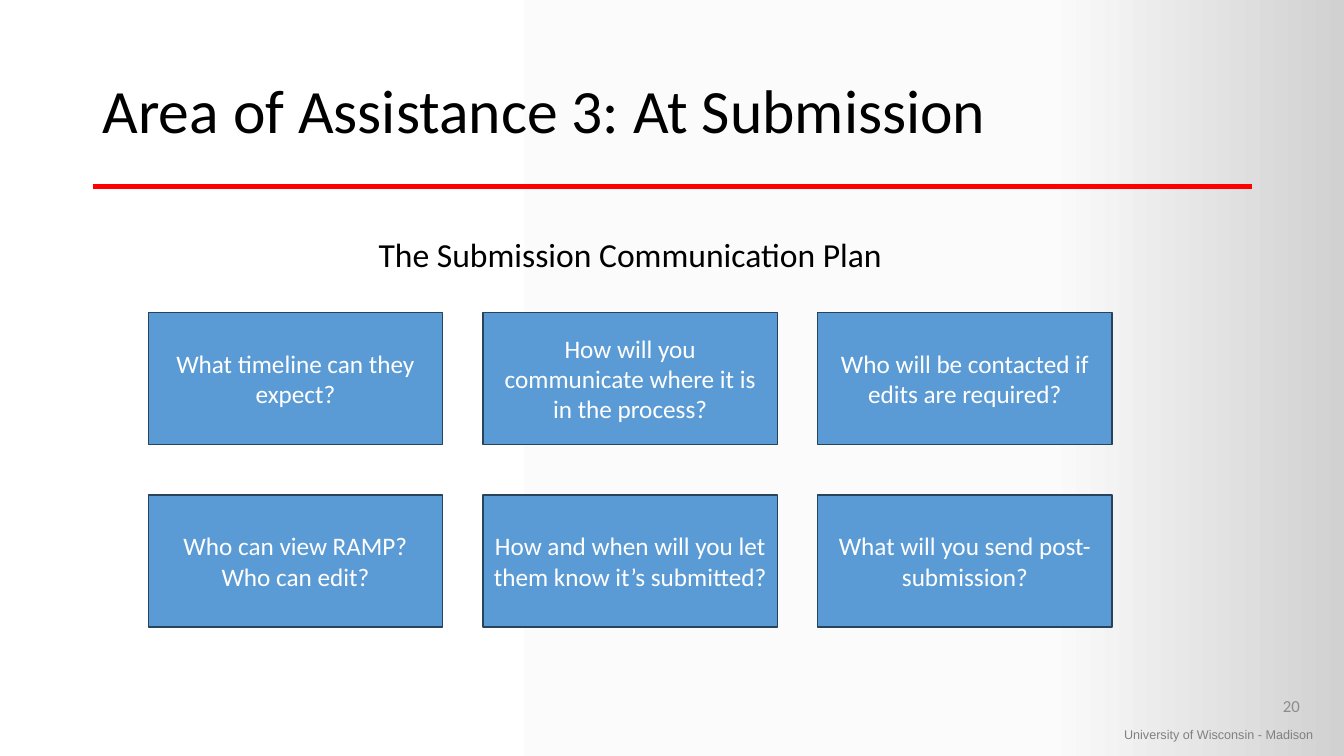
"""Build the slide on the submission communication plan."""
from copy import deepcopy
from dataclasses import dataclass

from pptx import Presentation
from pptx.dml.color import RGBColor
from pptx.enum.shapes import MSO_CONNECTOR, MSO_SHAPE
from pptx.enum.text import MSO_ANCHOR, PP_ALIGN
from pptx.oxml.ns import qn
from pptx.oxml.xmlchemy import OxmlElement
from pptx.slide import Slide
from pptx.text.text import TextFrame
from pptx.util import Inches, Pt

LEFT, CENTER, RIGHT = PP_ALIGN.LEFT, PP_ALIGN.CENTER, PP_ALIGN.RIGHT
TOP, MIDDLE = MSO_ANCHOR.TOP, MSO_ANCHOR.MIDDLE
RECTANGLE = MSO_SHAPE.RECTANGLE
STRAIGHT = MSO_CONNECTOR.STRAIGHT

COLUMNS = 3
GRID_LEFT, GRID_TOP = 1.47, 3.1
COLUMN_STEP, ROW_STEP = 3.32, 1.81
CARD_WIDTH, CARD_HEIGHT = 2.92, 1.31


@dataclass(frozen=True)
class Style:
    size: float
    color: str
    align: PP_ALIGN = LEFT
    anchor: MSO_ANCHOR = TOP
    font: str = "Calibri"
    spacing: float = 1.0


@dataclass(frozen=True)
class Label:
    text: str
    left: float
    top: float
    width: float
    height: float
    style: Style


QUESTION_STYLE = Style(18, "FFFFFF", CENTER, MIDDLE)
LABELS = [
    Label("University of Wisconsin - Madison", 11.05, 7.16, 2.28, 0.25,
          Style(9, "808080", font="Arial")),
    Label("Area of Assistance 3: At Submission", 0.92, 0.4, 11.5, 1.45,
          Style(44, "000000", anchor=MIDDLE, spacing=0.9)),
    Label("20", 9.99, 6.8, 3, 0.4, Style(12, "8C8C8C", RIGHT, MIDDLE)),
    Label("The Submission Communication Plan", 2.04, 2.27, 8.42, 0.5,
          Style(24, "000000", CENTER)),
]
QUESTIONS = [
    "What timeline can they expect?",
    "How will you communicate where it is in the process?",
    "Who will be contacted if edits are required?",
    "Who can view RAMP? Who can edit?",
    "How and when will you let them know it’s submitted?",
    "What will you send post-submission?",
]
BACKGROUND = [(0, "FFFFFF"), (0.78, "FBFBFB"), (1, "D1D1D1")]


def rgb(color: str) -> RGBColor:
    """Turn a hex string into a colour."""
    return RGBColor.from_string(color)


def paint_background(slide: Slide) -> None:
    """Fill the background with the grey gradient."""
    fill = slide.background.fill
    fill.gradient()
    fill.gradient_angle = 0
    stops = slide.element.find(".//" + qn("a:gsLst"))
    stops.append(deepcopy(stops[-1]))
    for stop, (position, color) in zip(fill.gradient_stops, BACKGROUND):
        stop.position = position
        stop.color.rgb = rgb(color)


def write(frame: TextFrame, text: str, style: Style) -> None:
    """Write one styled paragraph into a text frame."""
    frame.word_wrap = True
    frame.vertical_anchor = style.anchor
    paragraph = frame.paragraphs[0]
    paragraph.alignment = style.align
    paragraph.line_spacing = style.spacing
    run = paragraph.add_run()
    run.text = text
    run.font.size = Pt(style.size)
    run.font.name = style.font
    run.font.color.rgb = rgb(style.color)


def add_label(slide: Slide, label: Label) -> None:
    """Add a text box for a label."""
    box = slide.shapes.add_textbox(Inches(label.left), Inches(label.top),
                                   Inches(label.width), Inches(label.height))
    write(box.text_frame, label.text, label.style)


def add_title_rule(slide: Slide) -> None:
    """Draw the red rule under the title."""
    rule = slide.shapes.add_connector(STRAIGHT, Inches(0.92), Inches(1.85),
                                      Inches(12.42), Inches(1.85))
    rule.line.color.rgb = rgb("FF0000")
    rule.line.width = Pt(3)
    rule.element.spPr.append(OxmlElement("a:effectLst"))


def add_question(slide: Slide, index: int, question: str) -> None:
    """Place a question card in its grid cell."""
    row, column = divmod(index, COLUMNS)
    card = slide.shapes.add_shape(RECTANGLE,
                                  Inches(GRID_LEFT + column * COLUMN_STEP),
                                  Inches(GRID_TOP + row * ROW_STEP),
                                  Inches(CARD_WIDTH), Inches(CARD_HEIGHT))
    card.shadow.inherit = False
    card.fill.solid()
    card.fill.fore_color.rgb = rgb("5B9BD5")
    card.line.color.rgb = rgb("28445D")
    card.line.width = Pt(1)
    write(card.text_frame, question, QUESTION_STYLE)


def main() -> None:
    """Build and save the presentation."""
    deck = Presentation()
    deck.slide_width, deck.slide_height = Inches(13.33), Inches(7.5)
    slide = deck.slides.add_slide(deck.slide_layouts[6])
    paint_background(slide)
    add_title_rule(slide)
    for label in LABELS:
        add_label(slide, label)
    for index, question in enumerate(QUESTIONS):
        add_question(slide, index, question)
    deck.save("out.pptx")


if __name__ == "__main__":
    main()
